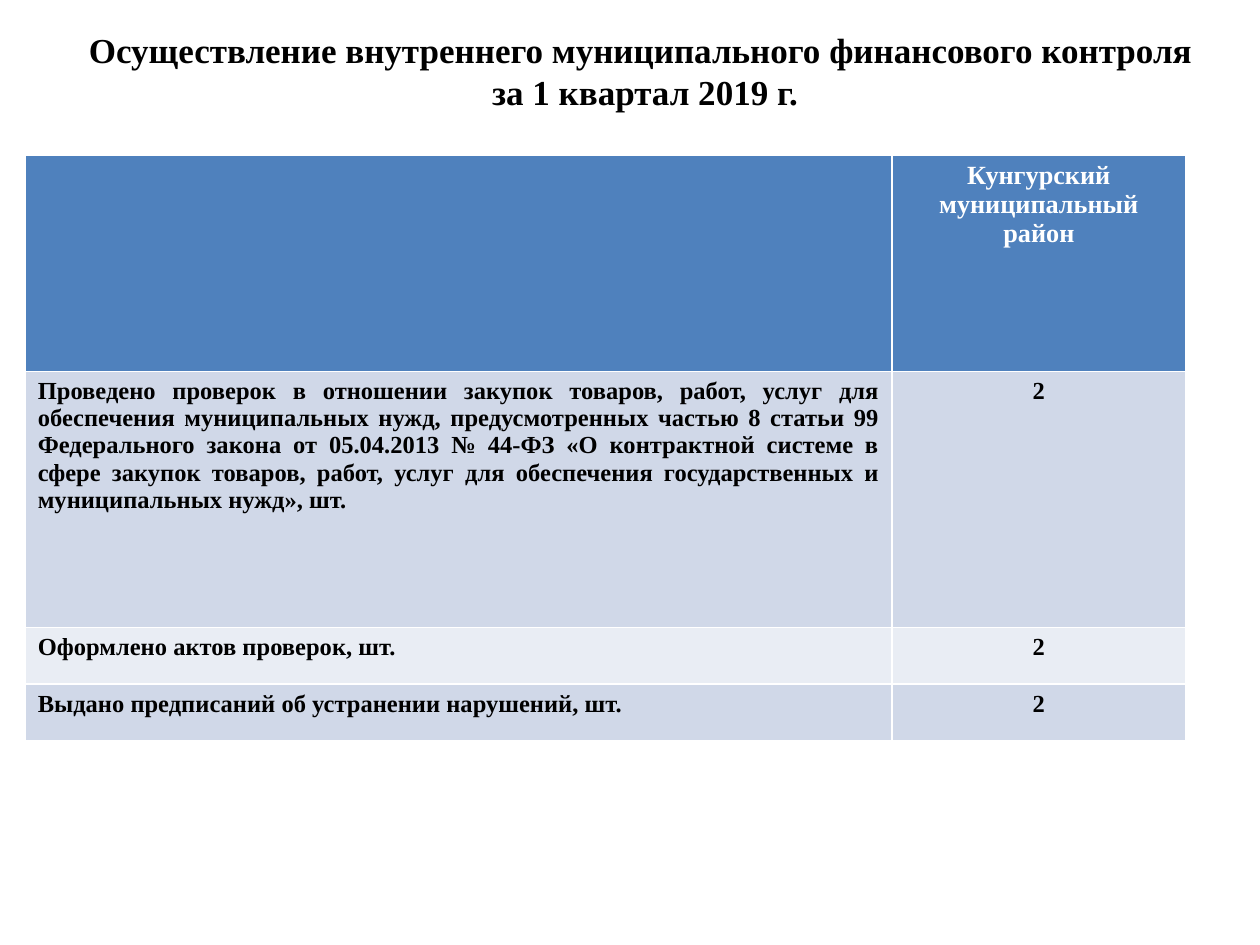
from dataclasses import dataclass

import pptx
import pptx.dml.color
import pptx.enum.text
import pptx.util

ALIGN = pptx.enum.text.PP_ALIGN
ANCHOR = pptx.enum.text.MSO_ANCHOR
WIDTH, HEIGHT = pptx.util.Inches(10), pptx.util.Inches(7.5)


@dataclass(frozen=True)
class Theme:
    font: str = "Times New Roman"
    dark: str = "000000"
    light: str = "FFFFFF"
    head: str = "4F81BD"
    bands: tuple[str, str] = ("D0D8E8", "E9EDF4")
    title: float = 20
    label: float = 15
    body: float = 14


@dataclass(frozen=True)
class Row:
    """A table row: its label, value, height in inches and label alignment."""
    label: str
    value: str
    height: float
    align: ALIGN = ALIGN.LEFT


THEME = Theme()
TITLE = ("Осуществление внутреннего муниципального финансового контроля \v"
         "за 1 квартал 2019 г.")
COLS = (6.88, 2.33)
ROWS = (
    Row("", "Кунгурский муниципальный район", 1.72),
    Row("Проведено проверок в отношении закупок товаров, работ, услуг для "
        "обеспечения муниципальных нужд, предусмотренных частью 8 статьи 99 "
        "Федерального закона от 05.04.2013 № 44-ФЗ «О контрактной системе в "
        "сфере закупок товаров, работ, услуг для обеспечения государственных "
        "и муниципальных нужд», шт.", "2", 2.03, ALIGN.JUSTIFY),
    Row("Оформлено актов проверок, шт.", "2", 0.45),
    Row("Выдано предписаний об устранении нарушений, шт.", "2", 0.45),
)


def color(code: str) -> pptx.dml.color.RGBColor:
    return pptx.dml.color.RGBColor.from_string(code)


def box(x: float, y: float, w: float, h: float) -> tuple[int, ...]:
    """Turn shares of the slide's size into lengths."""
    return int(x * WIDTH), int(y * HEIGHT), int(w * WIDTH), int(h * HEIGHT)


def write(frame, text: str, size: float, ink: str, align: ALIGN) -> None:
    frame.text = text
    para = frame.paragraphs[0]
    para.alignment = align
    form = {"name": THEME.font, "size": pptx.util.Pt(size), "bold": True}
    for run in para.runs:
        for key, value in form.items():
            setattr(run.font, key, value)
        run.font.color.rgb = color(ink)


def add_title(slide) -> None:
    frame = slide.shapes.add_textbox(*box(0.051, 0.017, 0.922, 0.116)).text_frame
    frame.word_wrap = True
    frame.vertical_anchor = ANCHOR.MIDDLE
    write(frame, TITLE, THEME.title, THEME.dark, ALIGN.CENTER)


def add_grid(slide) -> None:
    place = box(0.02, 0.164, 0.921, 0.62)
    grid = slide.shapes.add_table(len(ROWS), len(COLS), *place).table
    for col, width in zip(grid.columns, COLS):
        col.width = pptx.util.Inches(width)
    for i, row in enumerate(ROWS):
        grid.rows[i].height = pptx.util.Inches(row.height)
        if i == 0:
            fill, size, ink = THEME.head, THEME.label, THEME.light
        else:
            fill, size, ink = THEME.bands[(i - 1) % 2], THEME.body, THEME.dark
        pairs = ((row.label, row.align), (row.value, ALIGN.CENTER))
        for cell, (text, align) in zip(grid.rows[i].cells, pairs):
            cell.fill.solid()
            cell.fill.fore_color.rgb = color(fill)
            write(cell.text_frame, text, size, ink, align)


def main() -> None:
    deck = pptx.Presentation()
    deck.slide_width, deck.slide_height = WIDTH, HEIGHT
    slide = deck.slides.add_slide(deck.slide_layouts[6])
    add_title(slide)
    add_grid(slide)
    deck.save("out.pptx")


if __name__ == "__main__":
    main()
